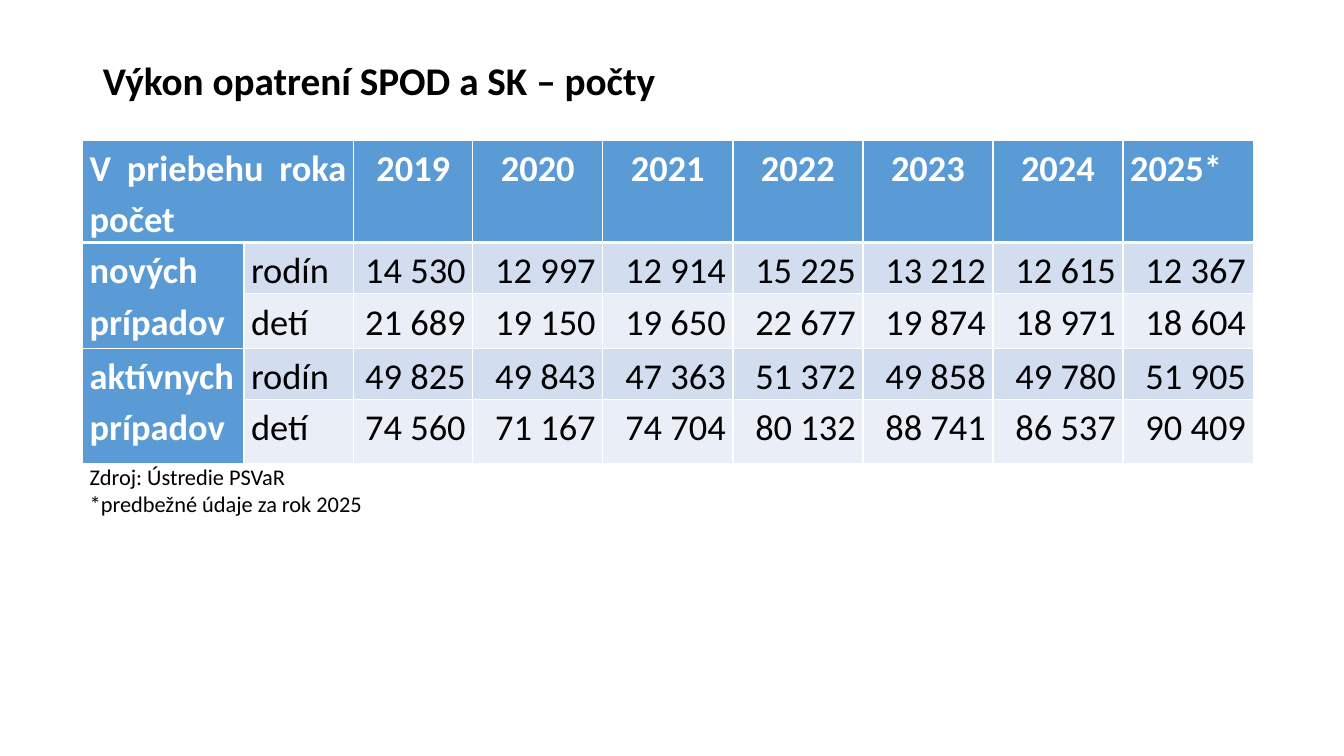
import pptx
import pptx.util
import pptx.dml.color
import pptx.enum.text
import pptx.oxml
import pptx.oxml.ns

BLUE, BAND, PALE, WHITE, BLACK = "5B9BD5", "D2DEEF", "EAEFF7", "FFFFFF", "000000"
Inches, Pt = pptx.util.Inches, pptx.util.Pt
ALIGN = pptx.enum.text.PP_ALIGN
ANCHOR = pptx.enum.text.MSO_ANCHOR


def rgb(value):
    return pptx.dml.color.RGBColor.from_string(value)


def write(tf, text, size, color, bold, **fmt):
    tf.word_wrap = True
    for i, line in enumerate(text.split("\n")):
        p = tf.paragraphs[0] if i == 0 else tf.add_paragraph()
        for name, value in fmt.items():
            setattr(p, name, value)
        r = p.add_run()
        r.text = line
        for name, value in {"size": Pt(size), "name": "Calibri", "bold": bold}.items():
            setattr(r.font, name, value)
        r.font.color.rgb = rgb(color)


prs = pptx.Presentation()
prs.slide_width, prs.slide_height = Inches(13.33), Inches(7.5)
s = prs.slides.add_slide(prs.slide_layouts[5])

title = s.shapes.title
title_box = {"left": 0.92, "top": 0.4, "width": 11.5, "height": 0.85}
for name, value in title_box.items():
    setattr(title, name, Inches(value))
title.text_frame.vertical_anchor = ANCHOR.MIDDLE
write(title.text_frame, "Výkon opatrení SPOD a SK – počty", 28, BLACK, True,
      alignment=ALIGN.LEFT, line_spacing=0.9)

rows = [
    ["V priebehu roka počet", "", "2019", "2020", "2021", "2022", "2023", "2024", "2025*"],
    ["nových prípadov", "rodín", "14 530", "12 997", "12 914", "15 225", "13 212", "12 615", "12 367"],
    ["", "detí", "21 689", "19 150", "19 650", "22 677", "19 874", "18 971", "18 604"],
    ["aktívnych prípadov", "rodín", "49 825", "49 843", "47 363", "51 372", "49 858", "49 780", "51 905"],
    ["", "detí", "74 560", "71 167", "74 704", "80 132", "88 741", "86 537", "90 409"],
    ["Zdroj: Ústredie PSVaR\n*predbežné údaje za rok 2025"] + [""] * 8,
]
widths = [1.6, 1.09, 1.18] + [1.29] * 6
heights = [0.66, 0.32, 0.54, 0.32, 0.64, 0.64]
last = len(rows) - 1

sp = s.shapes.add_table(len(rows), len(widths), Inches(0.82), Inches(1.39),
                        Inches(sum(widths)), Inches(4.2))
table = sp.table
for column, width in zip(table.columns, widths):
    column.width = Inches(width)
for row, height in zip(table.rows, heights):
    row.height = Inches(height)
sp.height = Inches(4.2)

for first, end in [((0, 0), (0, 1)), ((1, 0), (2, 0)), ((3, 0), (4, 0)), ((last, 0), (last, 8))]:
    table.cell(*first).merge(table.cell(*end))

margins = {"margin_left": 0.07, "margin_right": 0.07, "margin_top": 0, "margin_bottom": 0}
for i, row in enumerate(rows):
    for j, text in enumerate(row):
        cell = table.cell(i, j)
        for name, value in margins.items():
            setattr(cell, name, Inches(value))
        heading = i == 0 or (j == 0 and i < last)

        for side in "LRTB":
            thick = (i == 0 and side == "B") or (i == 1 and side == "T")
            cell._tc.get_or_add_tcPr().append(pptx.oxml.parse_xml(
                f'<a:ln{side} {pptx.oxml.ns.nsdecls("a")} w="{Pt(3 if thick else 1)}">'
                f'<a:solidFill><a:srgbClr val="{WHITE}"/></a:solidFill></a:ln{side}>'))

        if i == last:
            cell.fill.background()
        else:
            cell.fill.solid()
            cell.fill.fore_color.rgb = rgb(BLUE if heading else BAND if i % 2 else PALE)

        if not text:
            continue
        if i == last:
            write(cell.text_frame, text, 16, BLACK, False, alignment=ALIGN.LEFT)
        else:
            justified = j < 2 or (i == 0 and j == 8)
            align = ALIGN.JUSTIFY if justified else ALIGN.CENTER if i == 0 else ALIGN.RIGHT
            write(cell.text_frame, text, 26, WHITE if heading else BLACK, heading,
                  alignment=align, line_spacing=1.15)

prs.save("out.pptx")
